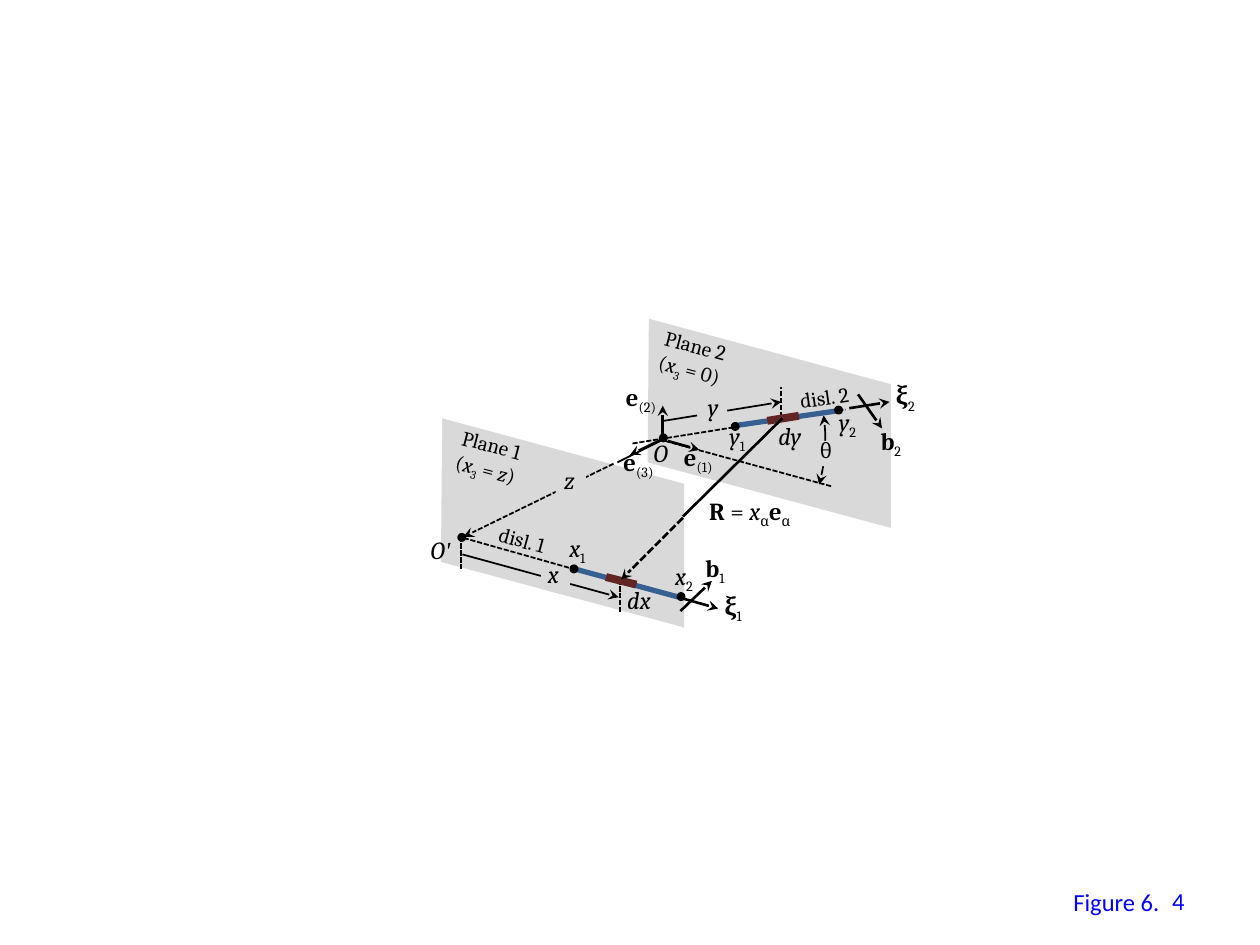
from copy import deepcopy

from lxml.etree import SubElement
from pptx import Presentation
from pptx.dml.color import RGBColor
from pptx.enum.shapes import MSO_CONNECTOR, MSO_SHAPE
from pptx.enum.text import MSO_ANCHOR, MSO_AUTO_SIZE, PP_ALIGN
from pptx.oxml.ns import qn
from pptx.util import Inches, Pt

BLACK, GRAY, WHITE = "000000", "D9D9D9", "FFFFFF"
BLUE, STEEL, MAROON = "0000FF", "376092", "632523"


def rgb(value):
    return RGBColor.from_string(value)


class Figure:
    font, size, dot_size = "Cambria", 14, 0.05

    def __init__(self, slide):
        self.s = slide

    def _outline(self, sp, color, width, dash=False, head=False, tail=False):
        sp.line.color.rgb = rgb(color)
        sp.line.width = Pt(width)
        ln = sp.line._get_or_add_ln()
        if dash:
            SubElement(ln, qn("a:prstDash"), val="sysDash")
        for tag, wanted in (("a:headEnd", head), ("a:tailEnd", tail)):
            if wanted:
                SubElement(ln, qn(tag), type="stealth")

    def line(self, x1, y1, x2, y2, width=1, color=BLACK, dash=False, tail=False):
        sp = self.s.shapes.add_connector(
            MSO_CONNECTOR.STRAIGHT, *map(Inches, (x1, y1, x2, y2)))
        self._outline(sp, color, width, dash, tail=tail)
        SubElement(sp._element.spPr, qn("a:effectLst"))

    def plane(self, x, y):
        corners = [(x + 0.01, y), (x, y + 1.14), (x + 1.93, y + 1.66), (x + 1.93, y + 0.52)]
        points = [(Inches(px), Inches(py)) for px, py in corners]
        fb = self.s.shapes.build_freeform(*points[0])
        fb.add_line_segments(points[1:], close=True)
        self._solid(fb.convert_to_shape(), GRAY)

    def _solid(self, sp, color):
        sp.shadow.inherit = False
        sp.fill.solid()
        sp.fill.fore_color.rgb = rgb(color)
        sp.line.fill.background()

    def mask(self, x, y, w=0.24, h=0.2, color=GRAY, rotation=0):
        sp = self.s.shapes.add_shape(MSO_SHAPE.RECTANGLE, *map(Inches, (x, y, w, h)))
        self._solid(sp, color)
        sp.rotation = rotation

    def dot(self, x, y):
        d = self.dot_size
        sp = self.s.shapes.add_shape(MSO_SHAPE.OVAL, *map(Inches, (x, y, d, d)))
        self._solid(sp, BLACK)
        self._outline(sp, BLACK, 1.5)

    def arc(self, x, y, w, h, start, end):
        sp = self.s.shapes.add_shape(MSO_SHAPE.ARC, *map(Inches, (x, y, w, h)))
        sp.shadow.inherit = False
        sp.fill.background()
        # Angles are stored in 60000ths of a degree, adjustments in 100000ths
        for i, degrees in enumerate((start, end)):
            sp.adjustments[i] = degrees * 0.6
        self._outline(sp, BLACK, 1, head=True, tail=True)

    def text(self, x, y, w, h, *runs, rotation=0, wrap=False, anchor=MSO_ANCHOR.TOP,
             align=PP_ALIGN.LEFT, **fmt):
        """Each run is (text, style): b bold, i italic, _ subscript, t Times."""
        sp = self.s.shapes.add_textbox(*map(Inches, (x, y, w, h)))
        sp.rotation = rotation
        tf = sp.text_frame
        frame = {"word_wrap": wrap, "vertical_anchor": anchor,
                 "auto_size": MSO_AUTO_SIZE.NONE if wrap else MSO_AUTO_SIZE.SHAPE_TO_FIT_TEXT}
        for name, value in frame.items():
            setattr(tf, name, value)
        p = tf.paragraphs[0]
        p.alignment = align
        for content, style in runs:
            for i, part in enumerate(content.split("\n")):
                if i:
                    p.add_line_break()
                    p._p[-1].append(deepcopy(r._r.get_or_add_rPr()))
                r = p.add_run()
                r.text = part
                values = {"name": "Times New Roman" if "t" in style else fmt.get("font", self.font),
                          "size": Pt(fmt.get("size", self.size)),
                          "bold": "b" in style, "italic": "i" in style}
                for name, value in values.items():
                    setattr(r.font, name, value)
                r.font.color.rgb = rgb(fmt.get("color", BLACK))
                if "_" in style:
                    r._r.get_or_add_rPr().set("baseline", "-25000")


def main():
    prs = Presentation()
    prs.slide_width, prs.slide_height = Inches(10), Inches(7.5)
    fig = Figure(prs.slides.add_slide(prs.slide_layouts[6]))

    # Planes
    fig.plane(3.5, 3.32)
    fig.plane(5.14, 2.53)

    # Angle between the dislocations
    fig.arc(3.94, 2.15, 2.61, 2.67, 351.7, 16.04)

    # Dashed guides
    for ends in [(5.02, 3.52, 6.71, 3.25), (5.28, 3.5, 6.6, 3.86), (3.68, 4.27, 4.53, 4.51),
                 (6.2, 3.31, 6.2, 3.07), (3.66, 4.52, 3.66, 4.28), (4.92, 4.86, 4.92, 4.63)]:
        fig.line(*ends, dash=True)

    # Dislocations and their elements dx, dy
    for ends in [(4.54, 4.51, 5.39, 4.74), (5.82, 3.38, 6.65, 3.26)]:
        fig.line(*ends, width=3, color=STEEL)
    for ends in [(4.81, 4.58, 5.05, 4.64), (6.09, 3.34, 6.34, 3.3)]:
        fig.line(*ends, width=4.5, color=MAROON)

    # Vectors: b2, xi2, xi1, b1, e3, e1, e2
    for ends in [(6.81, 3.13, 7, 3.4), (6.74, 3.24, 7.06, 3.19), (5.42, 4.75, 5.7, 4.83),
                 (5.4, 4.85, 5.65, 4.61), (5.25, 3.49, 5, 3.61), (5.3, 3.5, 5.55, 3.57),
                 (5.26, 3.46, 5.26, 3.22)]:
        fig.line(*ends, width=1.5, tail=True)

    # Separation R, solid in front and dashed over plane 1
    fig.line(6.21, 3.32, 5.42, 4.1, width=1.5)
    fig.line(5.42, 4.11, 4.93, 4.6, width=1.5, dash=True, tail=True)

    # Distances y, x and z
    fig.line(5.27, 3.34, 6.2, 3.19, tail=True)
    fig.line(3.67, 4.4, 4.91, 4.74, tail=True)
    fig.line(5.26, 3.49, 4.9, 3.67)
    fig.line(4.87, 3.68, 3.68, 4.26, dash=True, tail=True)

    # Gaps in the lines behind the labels
    fig.mask(5.59, 3.96, 0.17, 0.25, WHITE)
    fig.mask(4.41, 3.77)
    fig.mask(4.29, 4.5, rotation=15)
    fig.mask(5.53, 3.16, rotation=353.6)
    fig.mask(6.42, 3.5)

    # Points
    for x, y in [(5.24, 3.45), (3.64, 4.24), (5.81, 3.36), (6.63, 3.23), (4.53, 4.49), (5.38, 4.71)]:
        fig.dot(x, y)

    # Symbols with a subscript
    for x, y, w, symbol, style, sub in [
            (5.5, 4.34, 0.4, "b", "b", "1"), (6.89, 3.33, 0.4, "b", "b", "2"),
            (5.65, 4.64, 0.39, "ξ", "b", "1"), (7.01, 2.97, 0.39, "ξ", "b", "2"),
            (5.33, 3.46, 0.47, "e", "b", "(1)"), (4.87, 2.98, 0.47, "e", "b", "(2)"),
            (4.85, 3.5, 0.47, "e", "b", "(3)"),
            (4.42, 4.18, 0.4, "x", "i", "1"), (5.26, 4.4, 0.4, "x", "i", "2"),
            (5.69, 3.29, 0.4, "y", "i", "1"), (6.56, 3.18, 0.4, "y", "i", "2")]:
        fig.text(x, y, w, 0.34, (symbol, style), (sub, "_"))

    # Plain symbols
    for x, y, w, symbol in [(4.88, 4.59, 0.44, "dx"), (6.08, 3.29, 0.44, "dy"),
                            (5.09, 3.43, 0.4, "O"), (4.38, 3.64, 0.33, "z"),
                            (4.25, 4.39, 0.34, "x"), (5.52, 3.06, 0.34, "y")]:
        fig.text(x, y, w, 0.34, (symbol, "i"))
    fig.text(3.32, 4.2, 0.45, 0.34, ("O", "i"), ("'", "it"))
    fig.text(6.41, 3.42, 0.33, 0.3, ("θ", ""), size=12)
    fig.text(5.53, 3.89, 0.89, 0.34, ("R", "b"), (" = ", ""), ("x", "i"), ("α", "_"),
             ("e", "b"), ("α", "_"))

    # Names of planes and dislocations
    fig.text(3.54, 3.38, 0.7, 0.5, ("Plane 1\n(", ""), ("x", "i"), ("3", "_"), (" = ", ""),
             ("z", "i"), (")", ""), rotation=14.8, size=12)
    fig.text(5.15, 2.59, 0.71, 0.5, ("Plane 2\n(", ""), ("x", "i"), ("3", "_"), (" = 0)", ""),
             rotation=14.8, size=12)
    fig.text(3.86, 4.14, 0.61, 0.3, ("disl. 1", ""), rotation=15.5, size=12)
    fig.text(6.25, 3, 0.61, 0.3, ("disl. 2", ""), rotation=352, size=12)

    # Figure number
    footer = {"font": "Calibri", "color": BLUE}
    fig.text(8.42, 6.99, 0.89, 0.34, ("Figure 6.", ""), **footer)
    fig.text(7.17, 6.95, 2.33, 0.4, ("4", ""), wrap=True, anchor=MSO_ANCHOR.MIDDLE,
             align=PP_ALIGN.RIGHT, **footer)

    prs.save("out.pptx")


if __name__ == "__main__":
    main()
